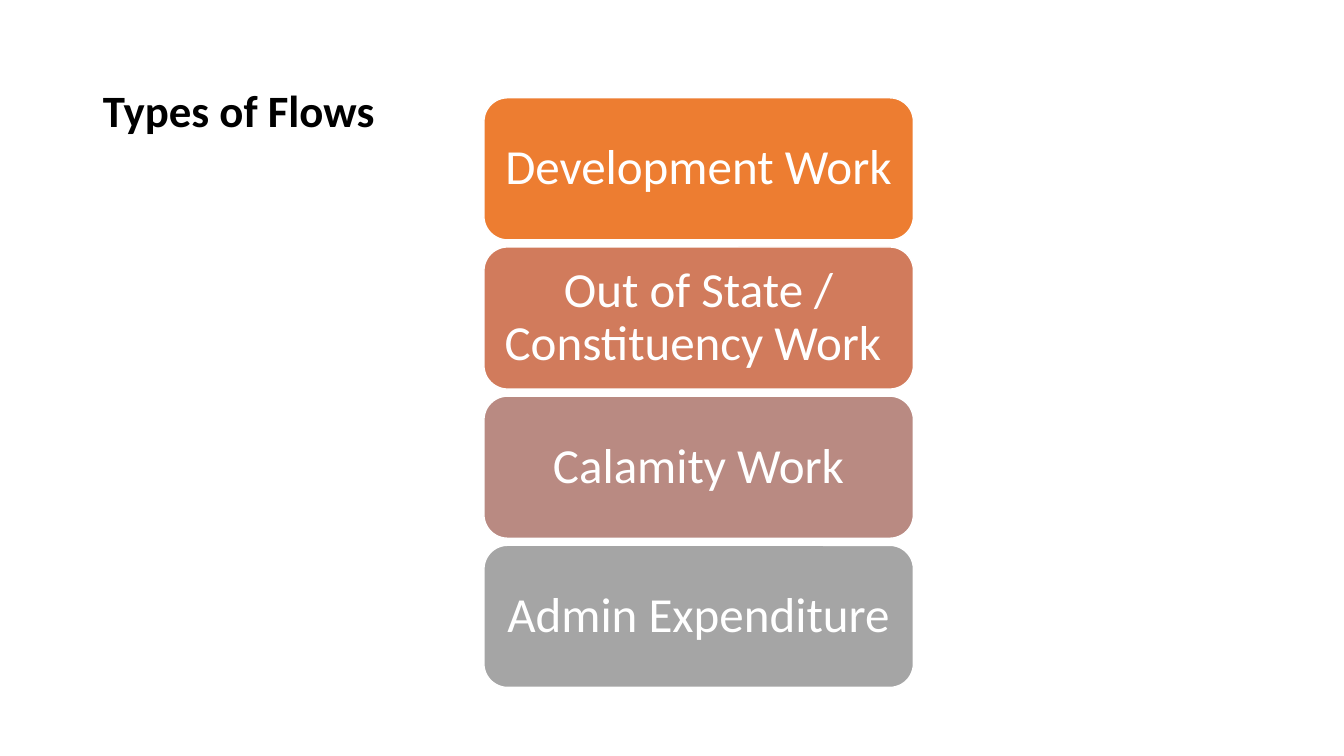
from dataclasses import dataclass

from pptx import Presentation
from pptx.dml.color import RGBColor
from pptx.enum.shapes import MSO_SHAPE
from pptx.enum.text import MSO_ANCHOR, MSO_AUTO_SIZE, PP_ALIGN
from pptx.util import Inches, Pt


@dataclass(frozen=True)
class Theme:
    font: str = "Calibri"
    title_size: int = 32
    flow_size: int = 35
    black: str = "000000"
    white: str = "FFFFFF"


THEME = Theme()

# Flow labels with their fills, top to bottom
FLOWS = [
    ("Development Work", "ED7D31"),
    ("Out of State / Constituency Work ", "D17B5C"),
    ("Calamity Work", "B98A82"),
    ("Admin Expenditure", "A5A5A5"),
]
FLOW_LEFT, FLOW_TOP = 4.8, 0.97
FLOW_WIDTH, FLOW_HEIGHT = 4.26, 1.41
FLOW_PITCH = 1.48


def set_text(tf, text, size, color, align, bold=False):
    tf.text = text
    tf.word_wrap = True
    tf.auto_size = MSO_AUTO_SIZE.NONE
    tf.vertical_anchor = MSO_ANCHOR.MIDDLE
    p = tf.paragraphs[0]
    p.alignment = align
    p.line_spacing = 0.9
    p.font.name = THEME.font
    p.font.size = Pt(size)
    p.font.bold = bold
    p.font.color.rgb = RGBColor.from_string(color)


def add_title(s, text):
    sp = s.shapes.title
    sp.left, sp.top = Inches(0.92), Inches(0.4)
    sp.width, sp.height = Inches(11.5), Inches(1.45)
    set_text(sp.text_frame, text, THEME.title_size, THEME.black,
             PP_ALIGN.LEFT, bold=True)


def add_flow(s, top, text, fill):
    sp = s.shapes.add_shape(
        MSO_SHAPE.ROUNDED_RECTANGLE, Inches(FLOW_LEFT), Inches(top),
        Inches(FLOW_WIDTH), Inches(FLOW_HEIGHT))
    sp.shadow.inherit = False
    sp.fill.solid()
    sp.fill.fore_color.rgb = RGBColor.from_string(fill)
    sp.line.color.rgb = RGBColor.from_string(THEME.white)
    sp.line.width = Pt(1)
    # The rounded corners already inset the text area
    tf = sp.text_frame
    tf.margin_left = tf.margin_right = Inches(0.08)
    tf.margin_top = tf.margin_bottom = 0
    set_text(tf, text, THEME.flow_size, THEME.white, PP_ALIGN.CENTER)


def main():
    prs = Presentation()
    prs.slide_width, prs.slide_height = Inches(13.33), Inches(7.5)
    s = prs.slides.add_slide(prs.slide_layouts.get_by_name("Title Only"))

    # Heading
    add_title(s, "Types of Flows")

    # Stack of flow boxes
    for i, (text, fill) in enumerate(FLOWS):
        add_flow(s, FLOW_TOP + i * FLOW_PITCH, text, fill)

    prs.save("out.pptx")


if __name__ == "__main__":
    main()
